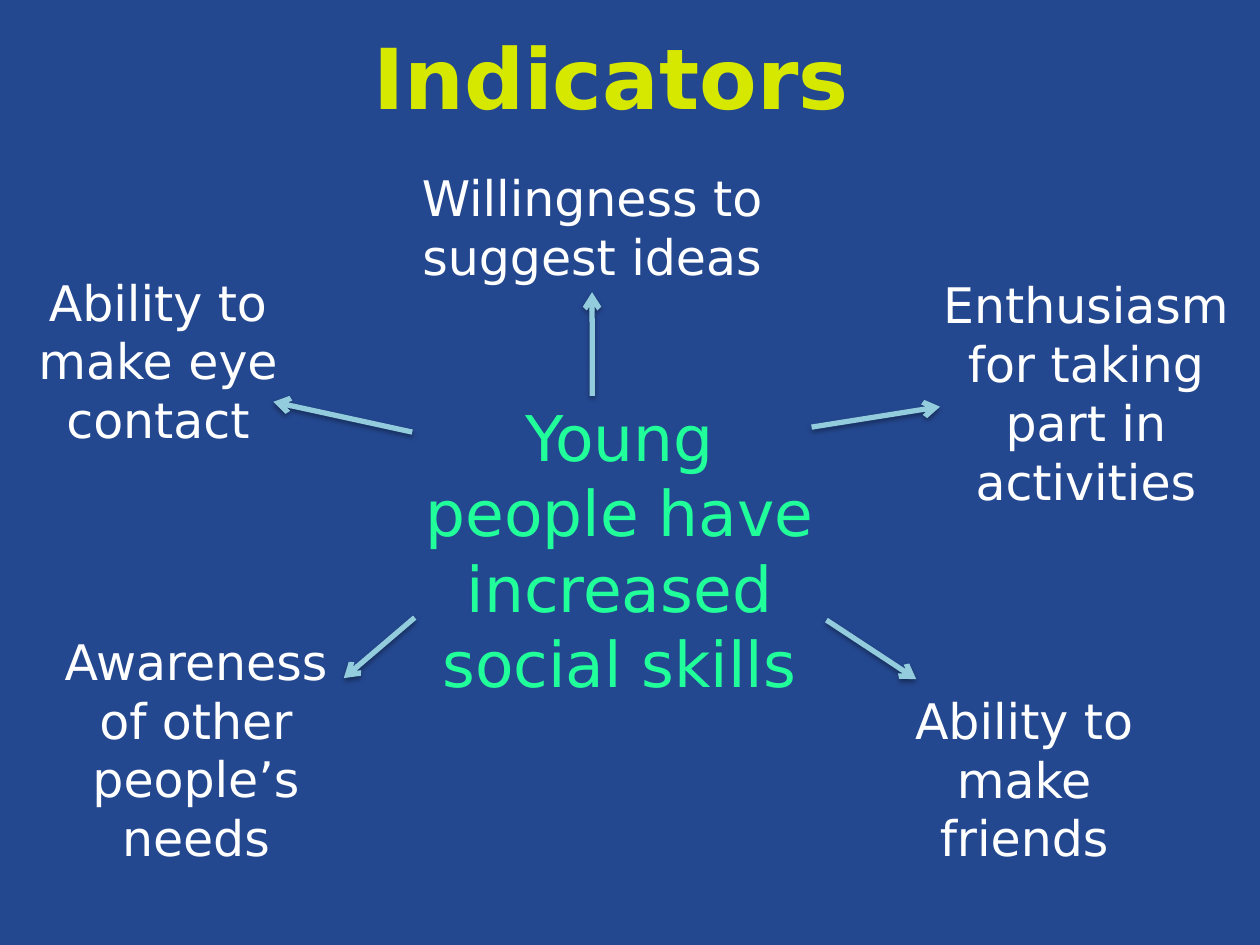
from lxml.etree import SubElement
from pptx import Presentation
from pptx.dml.color import RGBColor as Rgb
from pptx.enum.shapes import MSO_CONNECTOR as Connector
from pptx.enum.text import MSO_ANCHOR as Anchor, MSO_AUTO_SIZE as AutoSize, PP_ALIGN as Align
from pptx.oxml.ns import qn
from pptx.util import Cm, Pt

THEME = {
    "font": "DejaVu Sans",
    "background": "244890",
    "title": {"size": 48, "color": "D7E800"},
    "outcome": {"size": 36, "color": "21FF9B"},
    "indicator": {"size": 28, "color": "FFFFFF"},
    "arrow": {"width": 3, "color": "93CDDD"},
    "shadow": {"color": "000000", "alpha": 38, "blur": 3.15, "distance": 1.57, "angle": 90},
}

TITLE = ("Indicators", (5.31, 0.33, 14.02, 2.41))
OUTCOME = ("Young people have increased social skills", (8.31, 7.9, 8.36, 6.4))
INDICATORS = [
    {"text": "Willingness to suggest ideas", "box": (7.49, 3.25, 8.89, 2.64),
     "arrow": (11.94, 7.98, 11.94, 5.89), "joined_side": 2},
    {"text": "Enthusiasm for taking part in activities", "box": (18.69, 5.41, 6.4, 5.05),
     "arrow": (16.36, 8.61, 18.95, 8.2)},
    {"text": "Ability to make eye contact", "box": (0.48, 5.36, 5.41, 3.84),
     "arrow": (8.31, 8.71, 5.51, 8.1)},
    {"text": "Ability to make friends", "box": (17.7, 13.79, 5.89, 3.84),
     "arrow": (16.66, 12.5, 18.47, 13.69)},
    {"text": "Awareness of other people’s needs", "box": (0.43, 12.6, 7.04, 5.05),
     "arrow": (8.36, 12.45, 6.93, 13.67)},
]


def add_text(slide, text, box, *, size, color, bold=False,
             anchor=Anchor.TOP, fit=AutoSize.SHAPE_TO_FIT_TEXT):
    label = slide.shapes.add_textbox(*map(Cm, box))
    frame = label.text_frame
    frame.word_wrap = True
    frame.auto_size = fit
    frame.vertical_anchor = anchor
    paragraph = frame.paragraphs[0]
    paragraph.alignment = Align.CENTER
    run = paragraph.add_run()
    run.text = text
    run.font.name = THEME["font"]
    run.font.size = Pt(size)
    run.font.bold = bold
    run.font.color.rgb = Rgb.from_string(color)
    return label


def add_shadow(arrow):
    look = THEME["shadow"]
    effects = SubElement(arrow._element.spPr, qn("a:effectLst"))
    shadow = SubElement(effects, qn("a:outerShdw"), blurRad=str(Pt(look["blur"])),
                        dist=str(Pt(look["distance"])), dir=str(look["angle"] * 60000),
                        rotWithShape="0")
    color = SubElement(shadow, qn("a:srgbClr"), val=look["color"])
    SubElement(color, qn("a:alpha"), val=str(look["alpha"] * 1000))


def add_arrow(slide, ends, indicator, joined_side=None):
    arrow = slide.shapes.add_connector(Connector.STRAIGHT, *map(Cm, ends))
    if joined_side is not None:
        arrow.end_connect(indicator, joined_side)
    arrow.line.width = Pt(THEME["arrow"]["width"])
    arrow.line.color.rgb = Rgb.from_string(THEME["arrow"]["color"])
    SubElement(arrow.line._get_or_add_ln(), qn("a:tailEnd"), type="arrow")
    add_shadow(arrow)


def main():
    """Build the slide of indicators around one outcome."""
    deck = Presentation()
    deck.slide_width, deck.slide_height = Cm(25.4), Cm(19.05)
    slide = deck.slides.add_slide(deck.slide_layouts[6])
    background = slide.background.fill
    background.solid()
    background.fore_color.rgb = Rgb.from_string(THEME["background"])

    labels = [add_text(slide, item["text"], item["box"], **THEME["indicator"])
              for item in INDICATORS]
    add_text(slide, *OUTCOME, **THEME["outcome"])
    for item, label in zip(INDICATORS, labels):
        add_arrow(slide, item["arrow"], label, item.get("joined_side"))
    add_text(slide, *TITLE, **THEME["title"], bold=True,
             anchor=Anchor.MIDDLE, fit=AutoSize.NONE)
    deck.save("out.pptx")


if __name__ == "__main__":
    main()
